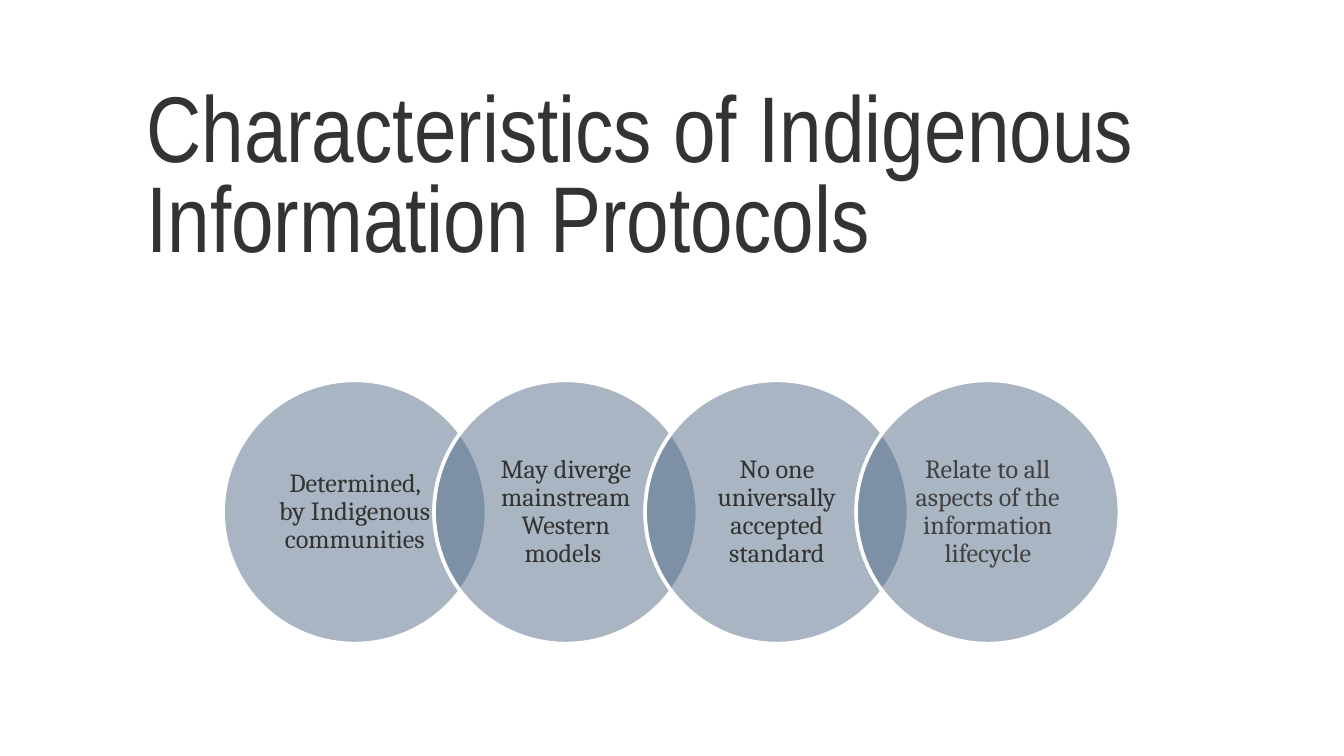
import pptx
import pptx.util
import pptx.dml.color
import pptx.enum.shapes
import pptx.enum.text
import pptx.oxml.ns
import lxml.etree

Inches = pptx.util.Inches
Pt = pptx.util.Pt

CIRCLES = [
    ("Determined, by Indigenous communities", "333333"),
    ("May diverge mainstream Western models ", "333333"),
    ("No one universally accepted standard", "333333"),
    ("Relate to all aspects of the information lifecycle", "414042"),
]


def color(hex_string):
    return pptx.dml.color.RGBColor.from_string(hex_string)


def set_opacity(shape, percent):
    fill_color = shape.fill._xPr.find(".//" + pptx.oxml.ns.qn("a:srgbClr"))
    alpha = lxml.etree.SubElement(fill_color, pptx.oxml.ns.qn("a:alpha"))
    alpha.set("val", str(percent * 1000))


def add_text(slide, box, text, font_name, size, hex_string, spacing, insets):
    shape = slide.shapes.add_textbox(*(Inches(length) for length in box))
    frame = shape.text_frame
    frame.word_wrap = True
    frame.margin_left = frame.margin_right = Inches(insets[0])
    frame.margin_top = frame.margin_bottom = Inches(insets[1])
    paragraph = frame.paragraphs[0]
    paragraph.line_spacing = spacing
    run = paragraph.add_run()
    run.text = text
    run.font.name = font_name
    run.font.size = Pt(size)
    run.font.color.rgb = color(hex_string)
    return shape


def add_title(slide, box):
    add_text(slide, box, "Characteristics of Indigenous Information Protocols",
             "Arial Narrow", 50, "333333", 0.8, (0.1, 0.05))


def add_circle(slide, box, text, text_color):
    left, top, width, height = box
    circle = slide.shapes.add_shape(
        pptx.enum.shapes.MSO_SHAPE.OVAL, *(Inches(length) for length in box))
    circle.shadow.inherit = False
    circle.fill.solid()
    circle.fill.fore_color.rgb = color("546D89")
    set_opacity(circle, 50)
    circle.line.color.rgb = color("FFFFFF")
    circle.line.width = Pt(2)

    inset = 0.29
    label_box = (left + inset, top + inset, width - 2 * inset, height - 2 * inset)
    label = add_text(slide, label_box, text, "Cambria", 14, text_color, 0.9, (0.11, 0.02))
    label.text_frame.vertical_anchor = pptx.enum.text.MSO_ANCHOR.MIDDLE
    label.text_frame.paragraphs[0].alignment = pptx.enum.text.PP_ALIGN.CENTER


def add_circle_chain(slide, box):
    left, top, width, diameter = box
    step = (width - diameter) / (len(CIRCLES) - 1)
    for index, (text, text_color) in enumerate(CIRCLES):
        add_circle(slide, (left + index * step, top, diameter, diameter), text, text_color)


def main():
    presentation = pptx.Presentation()
    presentation.slide_width = Inches(10)
    presentation.slide_height = Inches(10 * 9 / 16)
    slide = presentation.slides.add_slide(presentation.slide_layouts[6])
    add_circle_chain(slide, (1.66, 2.83, 6.67, 1.96))
    add_title(slide, (0.99, 0.63, 8.01, 0.54))
    presentation.save("out.pptx")


if __name__ == "__main__":
    main()
